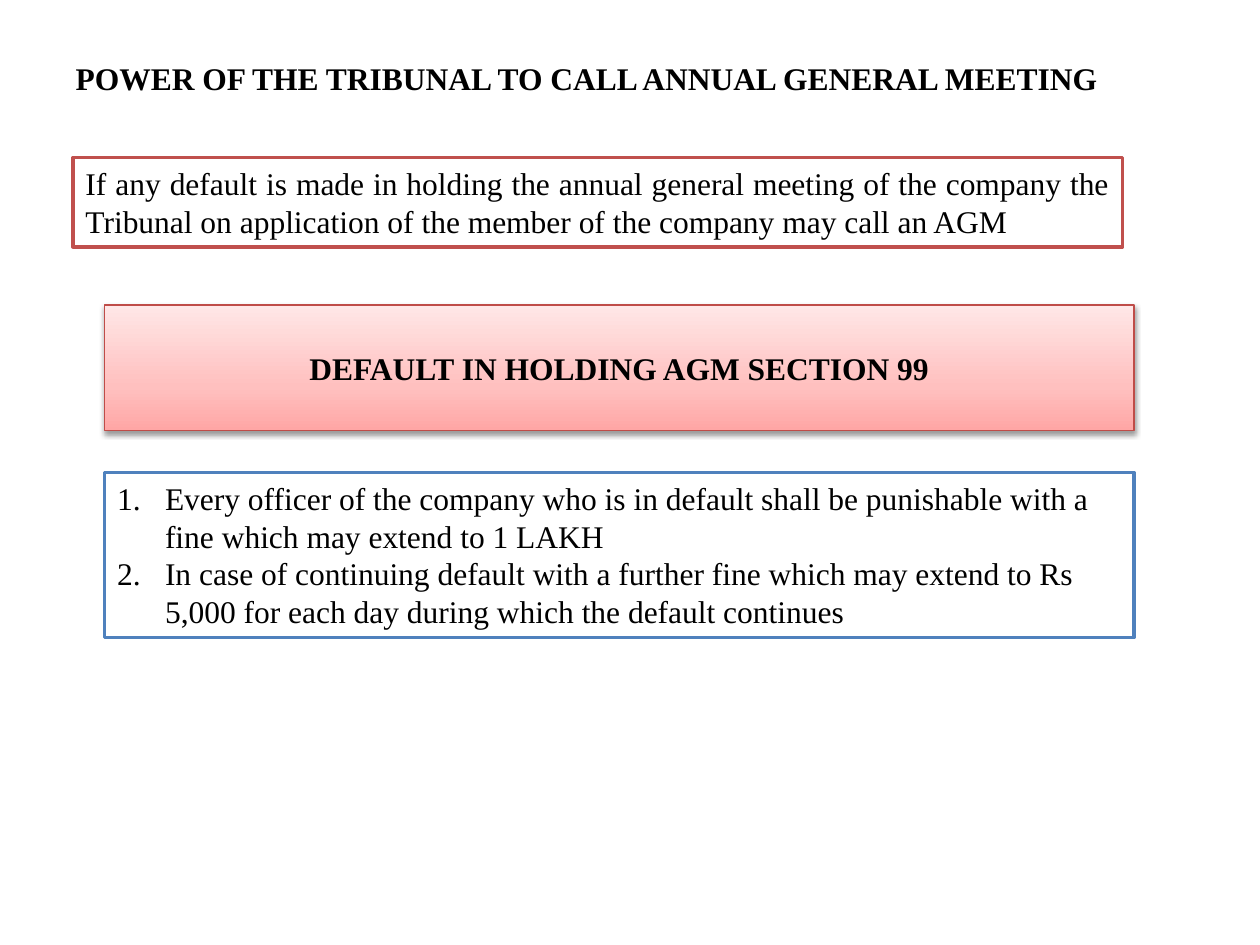
from copy import deepcopy

from lxml import etree
from pptx import Presentation
from pptx.dml import color
from pptx.enum import shapes, text
from pptx.oxml import ns
from pptx.util import Inches, Pt

FONT = "Times New Roman"
BLACK, WHITE, RED, BLUE = "000000", "FFFFFF", "C0504D", "4F81BD"
BANNER_LINE = "BF4C48"
BANNER_STOPS = [(0, "FFA6A5"), (0.35, "FFC0BF"), (1, "FFE7E7")]
ALIGN = text.PP_ALIGN
ANCHOR = text.MSO_ANCHOR


def rgb(value):
    return color.RGBColor.from_string(value)


def place(shape, left, top, width, height):
    shape.left, shape.top = Inches(left), Inches(top)
    shape.width, shape.height = Inches(width), Inches(height)


def outline(shape, line, width):
    shape.line.color.rgb = rgb(line)
    shape.line.width = Pt(width)


def paint(shape, line):
    shape.fill.solid()
    shape.fill.fore_color.rgb = rgb(WHITE)
    outline(shape, line, 2)


def write(shape, lines, align=ALIGN.LEFT, anchor=ANCHOR.TOP, bold=False):
    frame = shape.text_frame
    frame.word_wrap = True
    frame.auto_size = text.MSO_AUTO_SIZE.NONE
    frame.vertical_anchor = anchor
    for index, line in enumerate(lines):
        paragraph = frame.add_paragraph() if index else frame.paragraphs[0]
        paragraph.alignment = align
        paragraph.space_before = Pt(0)
        run = paragraph.add_run()
        run.text = line
        run.font.name = FONT
        run.font.size = Pt(18)
        run.font.bold = bold
        run.font.color.rgb = rgb(BLACK)


def number(shape, indent):
    for paragraph in shape.text_frame.paragraphs:
        properties = paragraph._p.get_or_add_pPr()
        properties.set("marL", str(Inches(indent)))
        properties.set("indent", str(-Inches(indent)))
        etree.SubElement(properties, ns.qn("a:buFont"), typeface="+mj-lt")
        etree.SubElement(properties, ns.qn("a:buAutoNum"), type="arabicPeriod")


def add_box(slide, left, top, width, height):
    shape = slide.shapes.add_shape(
        shapes.MSO_SHAPE.RECTANGLE, Inches(left), Inches(top), Inches(width), Inches(height)
    )
    shape.shadow.inherit = False
    return shape


def fill_gradient(shape, stops):
    shape.fill.gradient()
    shape.fill.gradient_angle = 90
    stop_list = shape._element.spPr.find(".//" + ns.qn("a:gsLst"))
    stop_list.append(deepcopy(stop_list[0]))
    for stop, (position, value) in zip(shape.fill.gradient_stops, stops):
        stop.position = position
        stop.color.rgb = rgb(value)


def cast_shadow(shape):
    effects = shape._element.spPr.find(ns.qn("a:effectLst"))
    shadow = etree.SubElement(
        effects, ns.qn("a:outerShdw"),
        blurRad="40000", dist="20000", dir="5400000", rotWithShape="0",
    )
    tint = etree.SubElement(shadow, ns.qn("a:srgbClr"), val=BLACK)
    etree.SubElement(tint, ns.qn("a:alpha"), val="38000")


def main():
    presentation = Presentation()
    presentation.slide_width, presentation.slide_height = Inches(10), Inches(7.5)
    slide = presentation.slides.add_slide(presentation.slide_layouts[1])

    title = slide.shapes.title
    place(title, 0.5, 0.42, 8.58, 0.4)
    write(title, ["POWER OF THE TRIBUNAL TO CALL ANNUAL GENERAL MEETING"], bold=True)

    rule = add_box(slide, 0.58, 1.25, 8.33, 0.71)
    paint(rule, RED)
    write(rule, [
        "If any default is made in holding the annual general meeting of the company the "
        "Tribunal on application of the member of the company may call an AGM ",
    ], ALIGN.JUSTIFY)

    banner = add_box(slide, 0.83, 2.42, 8.17, 1)
    fill_gradient(banner, BANNER_STOPS)
    outline(banner, BANNER_LINE, 0.75)
    cast_shadow(banner)
    write(banner, ["DEFAULT IN HOLDING AGM SECTION 99"], ALIGN.CENTER, ANCHOR.MIDDLE, True)

    penalties = slide.placeholders[1]
    place(penalties, 0.83, 3.75, 8.17, 1.31)
    paint(penalties, BLUE)
    write(penalties, [
        "Every officer of the company who is in default shall be punishable with a "
        "fine which may extend to 1 LAKH",
        "In case of continuing default with a further fine which may extend to Rs "
        "5,000 for each day during which the default continues",
    ])
    number(penalties, 0.38)

    presentation.save("out.pptx")


if __name__ == "__main__":
    main()
